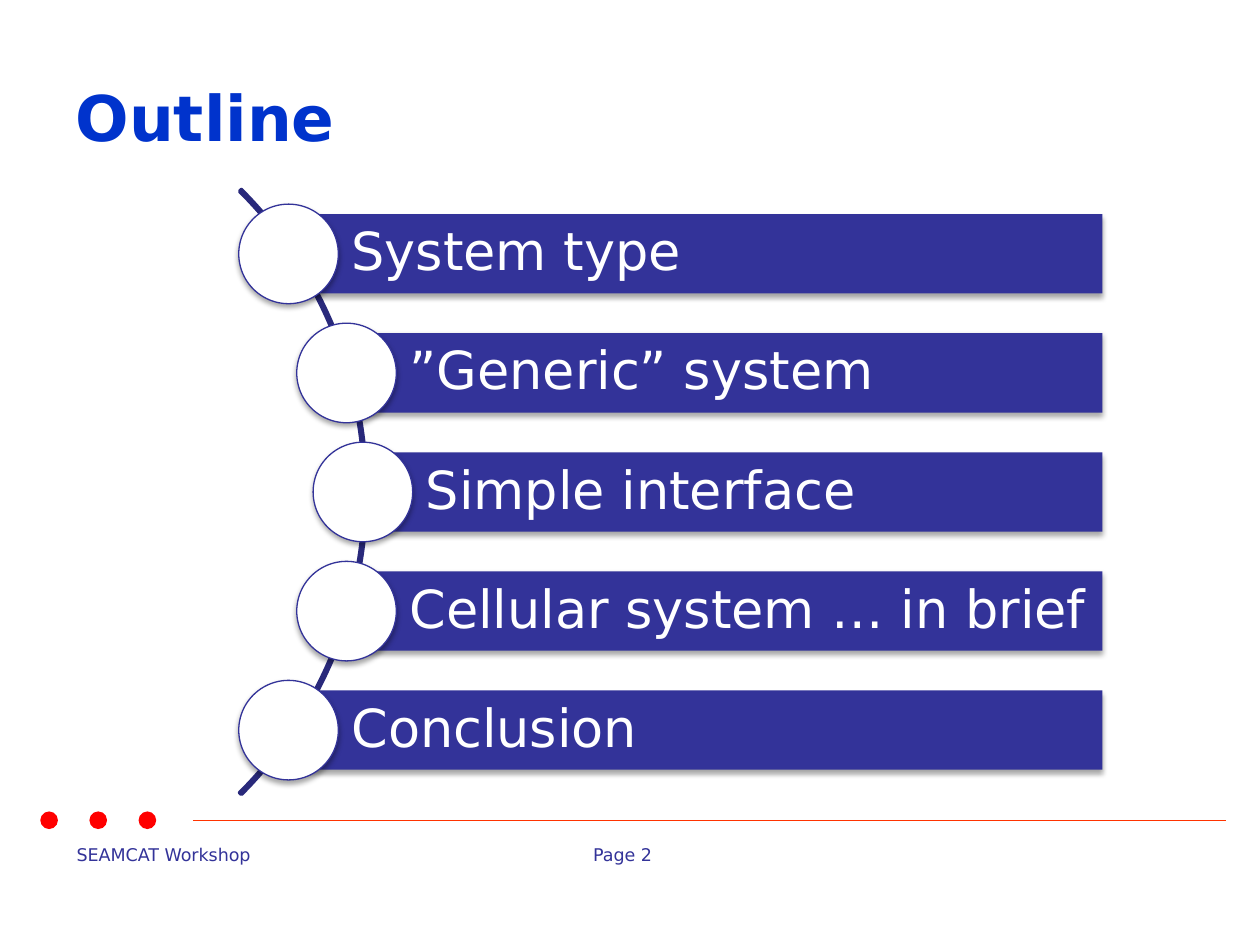
from lxml import etree
from pptx import Presentation
from pptx.dml.color import RGBColor
from pptx.enum.shapes import MSO_CONNECTOR, MSO_SHAPE
from pptx.enum.text import MSO_ANCHOR, PP_ALIGN
from pptx.oxml.ns import qn
from pptx.util import Inches, Pt

LEFT, MIDDLE = PP_ALIGN.LEFT, MSO_ANCHOR.MIDDLE
FONT = "DejaVu Sans"
INDIGO = RGBColor(0x33, 0x33, 0x99)
DARK_INDIGO = RGBColor(0x29, 0x29, 0x7B)
BLUE = RGBColor(0x00, 0x33, 0xCC)
RED = RGBColor(0xFF, 0x00, 0x00)
ORANGE = RGBColor(0xFF, 0x33, 0x00)
WHITE = RGBColor(0xFF, 0xFF, 0xFF)

TITLE = "Outline"
# Topic, and the left edge of its bar, which is also the centre of its circle
TOPICS = [
    ("System type", 2.29),
    ("”Generic” system", 2.75),
    ("Simple interface", 2.88),
    ("Cellular system … in brief", 2.75),
    ("Conclusion", 2.29),
]
# Text, left, width
FOOTERS = [("SEAMCAT Workshop", 0.51, 1.63), ("Page 2", 4.61, 0.82)]

BAR_RIGHT, BAR_HEIGHT, CIRCLE = 8.75, 0.63, 0.79
FIRST_CENTER, PITCH = 2.015, 0.945
DOT_COUNT, DOT, DOT_LEFT, DOT_PITCH = 3, 0.14, 0.32, 0.39
RULE_Y = 6.51


def set_text(frame, text, size, color, bold=False):
    frame.text = text
    paragraph = frame.paragraphs[0]
    paragraph.alignment = LEFT
    font = paragraph.runs[0].font
    font.name, font.size, font.bold = FONT, Pt(size), bold
    font.color.rgb = color
    return paragraph


def add_shape(slide, kind, left, top, width, height, fill=None, line=None, weight=0.75):
    shape = slide.shapes.add_shape(
        kind, Inches(left), Inches(top), Inches(width), Inches(height))
    if fill is None:
        shape.fill.background()
    else:
        shape.fill.solid()
        shape.fill.fore_color.rgb = fill
    if line is None:
        shape.line.fill.background()
    else:
        shape.line.color.rgb = line
        shape.line.width = Pt(weight)
    shape.shadow.inherit = False
    return shape


def drop_shadow(shape):
    effects = shape._element.spPr.find(qn("a:effectLst"))
    outer = etree.SubElement(
        effects, qn("a:outerShdw"), blurRad=str(Pt(3.1)), dist=str(Pt(1.8)),
        dir="5400000", rotWithShape="0")
    color = etree.SubElement(outer, qn("a:srgbClr"), val="000000")
    etree.SubElement(color, qn("a:alpha"), val="35000")


def add_footer(slide):
    for text, left, width in FOOTERS:
        box = slide.shapes.add_textbox(
            Inches(left), Inches(6.65), Inches(width), Inches(0.27))
        box.text_frame.word_wrap = False
        set_text(box.text_frame, text, 10, INDIGO)
    rule = slide.shapes.add_connector(
        MSO_CONNECTOR.STRAIGHT, Inches(1.53), Inches(RULE_Y), Inches(9.73), Inches(RULE_Y))
    rule.line.color.rgb = ORANGE
    rule.line.width = Pt(0.75)
    etree.SubElement(rule._element.spPr, qn("a:effectLst"))
    for i in range(DOT_COUNT):
        add_shape(slide, MSO_SHAPE.OVAL, DOT_LEFT + i * DOT_PITCH,
                  RULE_Y - DOT / 2, DOT, DOT, RED)


def add_topics(slide):
    arc = add_shape(slide, MSO_SHAPE.BLOCK_ARC, -3.88, 0.51, 6.79, 6.79,
                    line=DARK_INDIGO, weight=2)
    # Start and end angle (315 and 45 degrees), then relative thickness
    for i, value in enumerate((189, 27, 0.003)):
        arc.adjustments[i] = value

    for i, (topic, left) in enumerate(TOPICS):
        center = FIRST_CENTER + i * PITCH
        bar = add_shape(slide, MSO_SHAPE.RECTANGLE, left, center - BAR_HEIGHT / 2,
                        BAR_RIGHT - left, BAR_HEIGHT, INDIGO)
        drop_shadow(bar)
        frame = bar.text_frame
        frame.word_wrap = True
        frame.vertical_anchor = MIDDLE
        frame.margin_left = Inches(0.5)
        frame.margin_top = frame.margin_right = frame.margin_bottom = Inches(0.08)
        set_text(frame, topic, 30, WHITE).line_spacing = 0.9
        circle = add_shape(slide, MSO_SHAPE.OVAL, left - CIRCLE / 2, center - CIRCLE / 2,
                           CIRCLE, CIRCLE, WHITE, INDIGO)
        drop_shadow(circle)


def main():
    prs = Presentation()
    prs.slide_width, prs.slide_height = Inches(10), Inches(7.5)
    slide = prs.slides.add_slide(prs.slide_layouts[5])
    title = slide.shapes.title
    title.left, title.top = Inches(0.5), Inches(0.3)
    title.width, title.height = Inches(9), Inches(1.25)
    title.text_frame.vertical_anchor = MIDDLE
    set_text(title.text_frame, TITLE, 36, BLUE, bold=True)
    add_footer(slide)
    add_topics(slide)
    prs.save("out.pptx")


if __name__ == "__main__":
    main()
